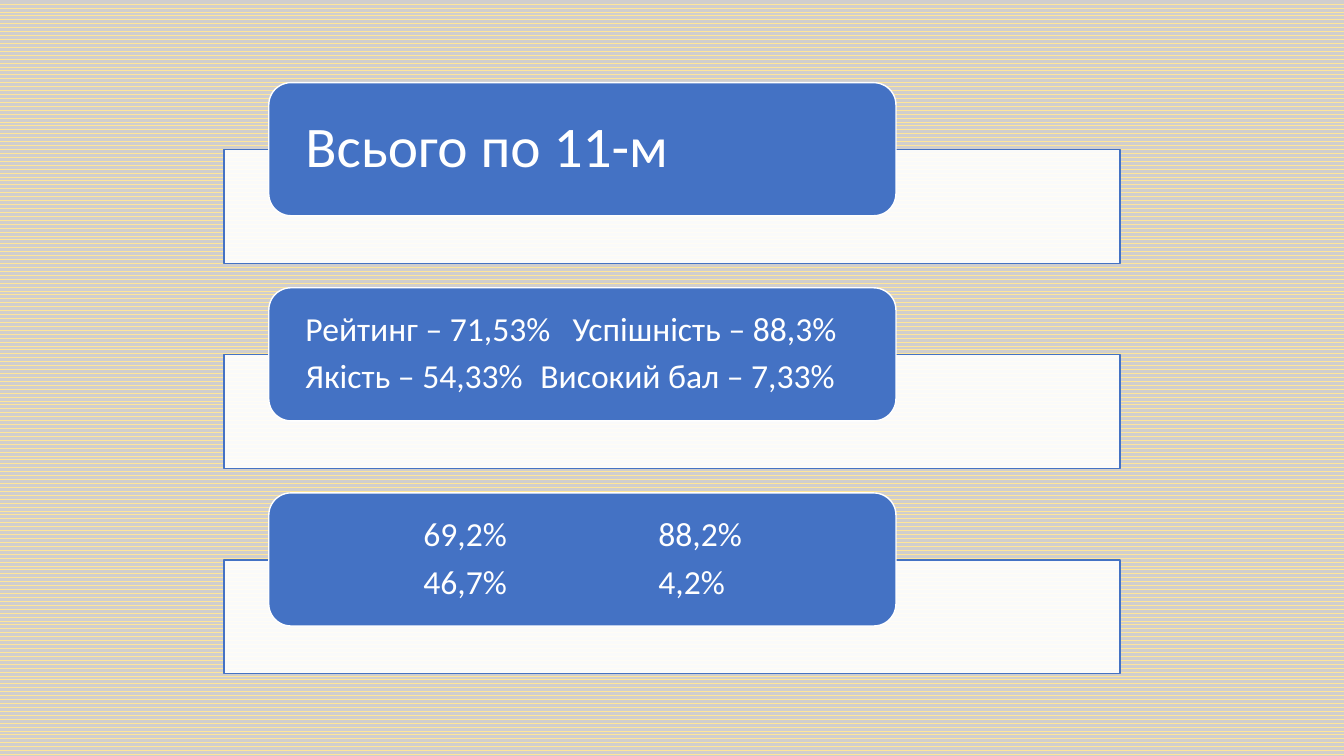
"""Build the slide with the overall results of the 11th forms."""
from lxml import etree
from pptx import Presentation
from pptx.dml.color import RGBColor
from pptx.enum.dml import MSO_PATTERN
from pptx.enum.shapes import MSO_SHAPE
from pptx.enum.text import MSO_ANCHOR, PP_ALIGN
from pptx.oxml.ns import qn
from pptx.util import Inches, Pt

WAVE = MSO_PATTERN.WAVE
RECT = MSO_SHAPE.RECTANGLE
ROUNDED = MSO_SHAPE.ROUNDED_RECTANGLE
MIDDLE = MSO_ANCHOR.MIDDLE
LEFT = PP_ALIGN.LEFT

COLORS = {"blue": "4472C4", "white": "FFFFFF", "yellow": "FFE699", "gray": "D0CECE"}
FONT = "Calibri"
SLIDE_W, SLIDE_H = 13.33, 7.5

PANEL_LEFT, PANEL_W, PANEL_H = SLIDE_W / 6, SLIDE_W * 2 / 3, 1.13
LABEL_LEFT, LABEL_W, LABEL_H = SLIDE_W / 5, PANEL_W * 0.7, 1.32
FIRST_TOP, ROW_PITCH, PANEL_DROP = 0.82, 2.035, 0.665
LABEL_INSET = 0.3

ROWS = [
    (41, [("Всього по 11-м", ())]),
    (24, [("Рейтинг – 71,53%\tУспішність – 88,3%", (2.65,)),
          ("Якість – 54,33%\tВисокий бал – 7,33%", (2.33,))]),
    (24, [("\t69,2%\t88,2%", (1.17, 3.5)),
          ("\t46,7%\t4,2%", (1.17, 3.5))]),
]


def rgb(name):
    """Return the named colour."""
    return RGBColor.from_string(COLORS[name])


def set_background(slide):
    """Give the slide its wave pattern."""
    fill = slide.background.fill
    fill.patterned()
    fill.pattern = WAVE
    fill.fore_color.rgb = rgb("yellow")
    fill.back_color.rgb = rgb("gray")


def add_box(slide, kind, left, top, width, height, fill, line):
    """Add a filled, outlined shape without a shadow."""
    sp = slide.shapes.add_shape(
        kind, Inches(left), Inches(top), Inches(width), Inches(height))
    sp.shadow.inherit = False
    sp.fill.solid()
    sp.fill.fore_color.rgb = rgb(fill)
    sp.line.color.rgb = rgb(line)
    sp.line.width = Pt(1)
    return sp


def set_opacity(sp, percent):
    """Set the opacity of a solid fill."""
    color = sp._element.spPr.find(qn("a:solidFill")).find(qn("a:srgbClr"))
    etree.SubElement(color, qn("a:alpha"), val=str(percent * 1000))


def add_tab_stops(p, stops):
    """Add left tab stops, given in inches, to a paragraph."""
    tabs = etree.SubElement(p._p.get_or_add_pPr(), qn("a:tabLst"))
    for stop in stops:
        etree.SubElement(tabs, qn("a:tab"), pos=str(Inches(stop)), algn="l")


def write_lines(sp, lines, size):
    """Write left-aligned white lines into a label."""
    tf = sp.text_frame
    tf.word_wrap = True
    tf.vertical_anchor = MIDDLE
    tf.margin_left = tf.margin_right = Inches(LABEL_INSET)
    tf.margin_top = tf.margin_bottom = 0
    for i, (text, stops) in enumerate(lines):
        p = tf.add_paragraph() if i else tf.paragraphs[0]
        p.text = text
        if stops:
            add_tab_stops(p, stops)
        p.alignment = LEFT
        p.line_spacing = 0.9
        p.space_after = Pt(8)
        p.font.name = FONT
        p.font.size = Pt(size)
        p.font.color.rgb = rgb("white")


def add_row(slide, top, lines, size):
    """Add a pale panel with a rounded label over its upper edge."""
    panel = add_box(slide, RECT, PANEL_LEFT, top + PANEL_DROP,
                    PANEL_W, PANEL_H, "white", "blue")
    set_opacity(panel, 90)
    label = add_box(slide, ROUNDED, LABEL_LEFT, top,
                    LABEL_W, LABEL_H, "blue", "white")
    write_lines(label, lines, size)


def main():
    """Build and save the presentation."""
    prs = Presentation()
    prs.slide_width, prs.slide_height = Inches(SLIDE_W), Inches(SLIDE_H)
    slide = prs.slides.add_slide(prs.slide_layouts[6])
    set_background(slide)
    for i, (size, lines) in enumerate(ROWS):
        add_row(slide, FIRST_TOP + i * ROW_PITCH, lines, size)
    prs.save("out.pptx")


if __name__ == "__main__":
    main()
